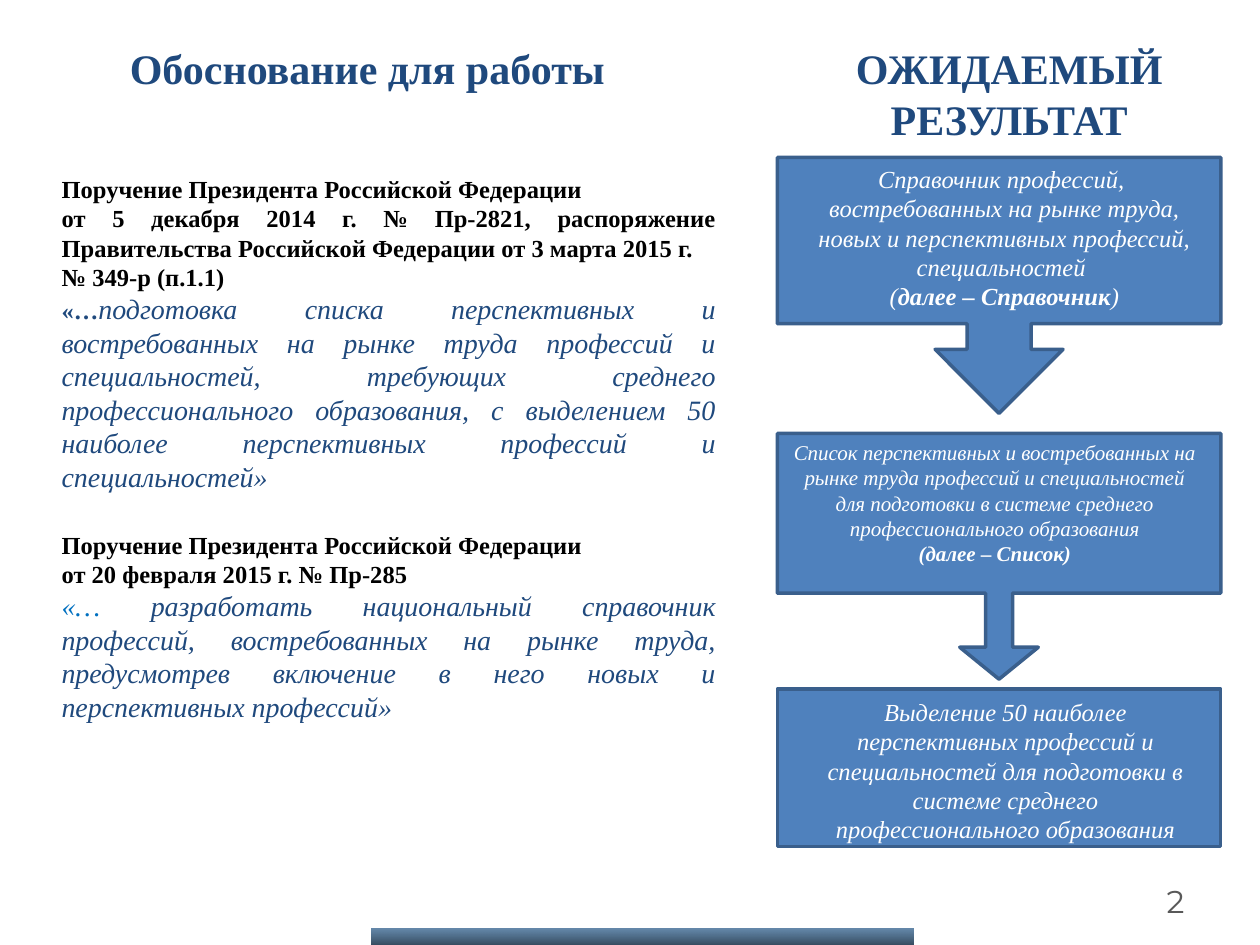
from pptx import Presentation
from pptx.util import Pt
from pptx.dml.color import RGBColor as RGB
from pptx.enum.shapes import MSO_SHAPE as Kind
from pptx.enum.text import PP_ALIGN as Al, MSO_ANCHOR as Anchor, MSO_AUTO_SIZE as Auto
from pptx.oxml.ns import qn
from lxml import etree

HUE = {
    "navy": "1F497D", "black": "000000", "white": "FFFFFF", "sky": "0070C0",
    "box": "4F81BD", "edge": "3A5F8C", "grey": "595959",
    "top": "003C73", "base": "001C35",
}
SERIF = "Times New Roman"


def add_text(x, y, w, h, paras, align, font=SERIF):
    box = slide.shapes.add_textbox(Pt(x), Pt(y), Pt(w), Pt(h))
    frame = box.text_frame
    frame.word_wrap = True
    frame.auto_size = Auto.SHAPE_TO_FIT_TEXT
    for i, runs in enumerate(paras):
        para = frame.paragraphs[0] if i == 0 else frame.add_paragraph()
        para.alignment = align
        for text, size, hue, style in runs:
            run = para.add_run()
            run.text = text
            run.font.name = font
            run.font.size = Pt(size)
            run.font.bold = "b" in style
            run.font.italic = "i" in style
            run.font.color.rgb = RGB.from_string(HUE[hue])
    return frame


def add_box(kind, y, h):
    box = slide.shapes.add_shape(kind, Pt(444.2), Pt(y), Pt(253.4), Pt(h))
    box.shadow.inherit = False
    box.fill.solid()
    box.fill.fore_color.rgb = RGB.from_string(HUE["box"])
    box.line.color.rgb = RGB.from_string(HUE["edge"])
    box.line.width = Pt(2)
    return box


prs = Presentation()
prs.slide_width, prs.slide_height = Pt(720), Pt(540)
slide = prs.slides.add_slide(prs.slide_layouts[6])

for x, w, h, text in [
    (8.6, 402.5, 36, "Обоснование для работы"),
    (433.4, 286.6, 65.5, "ОЖИДАЕМЫЙ РЕЗУЛЬТАТ"),
]:
    add_text(x, 20.9, w, h, [[(text, 24, "navy", "b")]], Al.CENTER)

head = (14, "black", "b")
quote = (16, "navy", "i")
basis = add_text(28.1, 95.8, 388.1, 324.7, [
    [("Поручение Президента Российской Федерации ", *head)],
    [("от 5 декабря 2014 г. № Пр-2821, распоряжение Правительства "
      "Российской Федерации от 3 марта 2015 г. ", *head)],
    [("№ 349-р (п.1.1) ", *head)],
    [("«…", 14, "navy", "b"),
     ("подготовка списка перспективных и востребованных на рынке труда "
      "профессий и специальностей, требующих среднего профессионального "
      "образования, с выделением 50 наиболее перспективных профессий и "
      "специальностей»", *quote)],
    [("Поручение Президента Российской Федерации ", *head)],
    [("от 20 февраля 2015 г. № Пр-285", *head)],
    [("«… ", 16, "sky", "i"),
     ("разработать национальный справочник профессий, востребованных на "
      "рынке труда, предусмотрев включение в него новых и перспективных "
      "профессий»", *quote)],
], Al.JUSTIFY)
basis.paragraphs[4].space_before = Pt(21)

add_box(Kind.DOWN_ARROW_CALLOUT, 90, 146.2)
note = (14, "white", "i")
add_text(455.8, 90, 236.2, 92.2, [
    [("Справочник профессий, ", *note)],
    [("востребованных на рынке труда, новых и перспективных профессий,", *note)],
    [("специальностей ", *note)],
    [("(", *note), ("далее – Справочник", 14, "white", "bi"), (")", *note)],
], Al.CENTER)

step = add_box(Kind.DOWN_ARROW_CALLOUT, 247.7, 140.4)
for i, ratio in enumerate([0.11, 0.16, 0.13, 0.65]):
    step.adjustments[i] = ratio
add_text(445, 247.7, 247, 79.9, [
    [("Список перспективных и востребованных на рынке труда профессий и "
      "специальностей для подготовки в системе среднего "
      "профессионального образования", 12, "white", "i")],
    [("(далее – Список)", 12, "white", "bi")],
], Al.CENTER)

add_box(Kind.RECTANGLE, 393.8, 90)
add_text(456.5, 394.6, 236.2, 92.2, [
    [("Выделение 50 наиболее перспективных профессий и специальностей для "
      "подготовки в системе среднего профессионального образования", *note)],
], Al.CENTER)

bar = slide.shapes.add_shape(Kind.RECTANGLE, Pt(212.4), Pt(530.6), Pt(309.6), Pt(9.4))
bar.shadow.inherit = False
bar.line.fill.background()
bar.fill.gradient()
bar.fill.gradient_angle = 270
for stop, hue, pos in zip(bar.fill.gradient_stops, ["top", "base"], [0, 1]):
    stop.color.rgb = RGB.from_string(HUE[hue])
    stop.position = pos
for clr, alpha in zip(bar._element.spPr.iter(qn("a:srgbClr")), [60, 80]):
    etree.SubElement(clr, qn("a:alpha")).set("val", str(alpha * 1000))

page = add_text(516.2, 500.4, 167.8, 28.8, [[("2", 18, "grey", "")]], Al.RIGHT, "Montserrat")
page.auto_size = Auto.NONE
page.vertical_anchor = Anchor.MIDDLE

prs.save("out.pptx")
